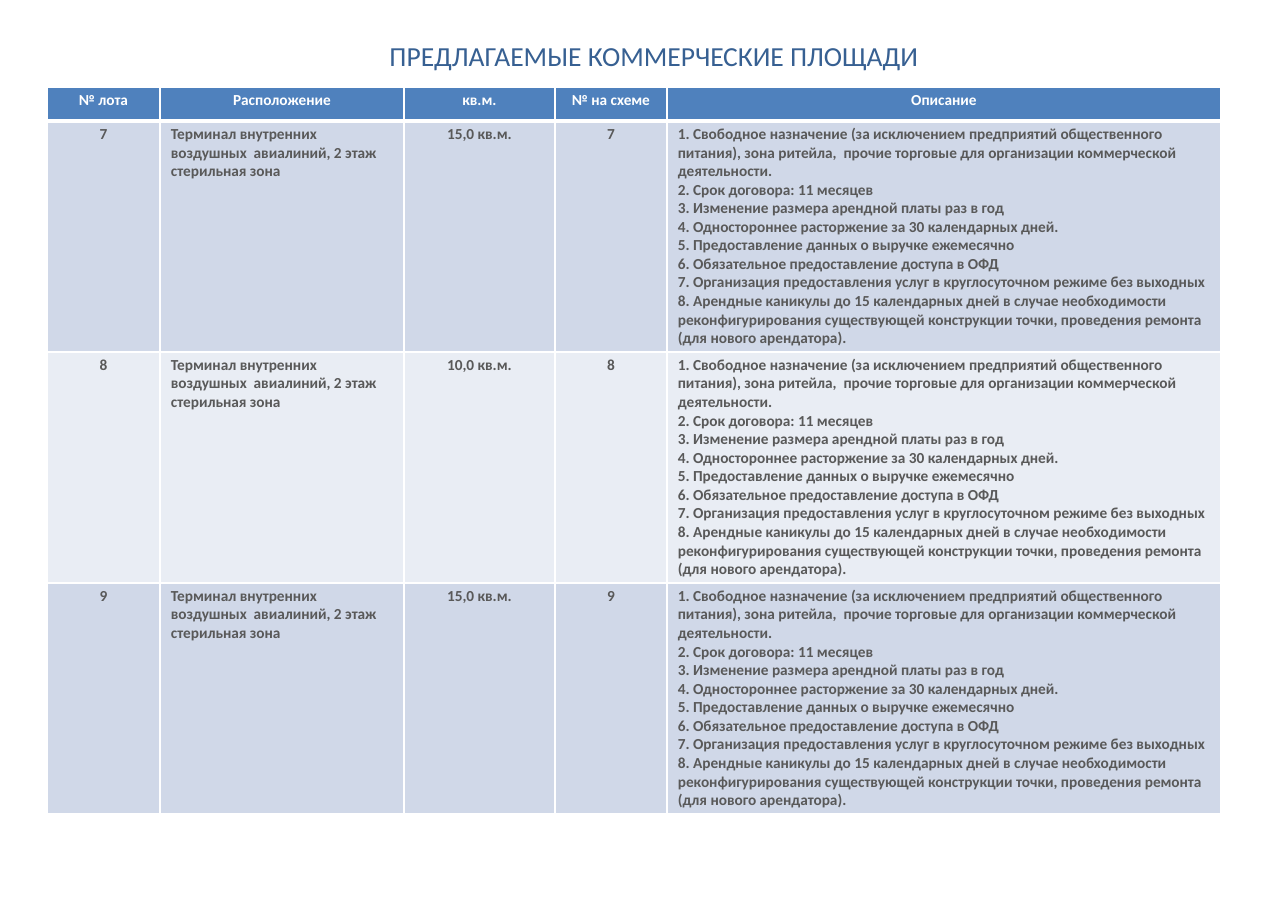
from typing import NamedTuple

from lxml import etree
from pptx import Presentation
from pptx.dml.color import RGBColor
from pptx.enum.text import MSO_ANCHOR, MSO_AUTO_SIZE, PP_ALIGN
from pptx.oxml.ns import qn
from pptx.util import Emu, Pt

PX = 8298  # EMU in one px, at 110.2 px to the inch
LEFT, CENTER = PP_ALIGN.LEFT, PP_ALIGN.CENTER
TOP = MSO_ANCHOR.TOP
NO_AUTOFIT = MSO_AUTO_SIZE.NONE

WHITE = RGBColor(0xFF, 0xFF, 0xFF)
GRAY = RGBColor(0x59, 0x59, 0x59)
TITLE_BLUE = RGBColor(0x37, 0x60, 0x92)
HEADER_BLUE = RGBColor(0x4F, 0x81, 0xBD)
BANDS = (RGBColor(0xD0, 0xD8, 0xE8), RGBColor(0xE9, 0xED, 0xF4))
FONT = "Calibri"


class Column(NamedTuple):
    heading: str
    width: int
    align: PP_ALIGN


class Lot(NamedTuple):
    number: str
    area: str


COLUMNS = (
    Column("№ лота", 113, CENTER),
    Column("Расположение", 244, LEFT),
    Column("кв.м.", 151, CENTER),
    Column("№ на схеме", 112, CENTER),
    Column("Описание", 554, LEFT),
)
LOTS = (Lot("7", "15,0 кв.м."), Lot("8", "10,0 кв.м."), Lot("9", "15,0 кв.м."))
LOCATION = "Терминал внутренних воздушных  авиалиний, 2 этаж\nстерильная зона"
TERMS = "\n".join((
    "1. Свободное назначение (за исключением предприятий общественного питания), "
    "зона ритейла,  прочие торговые для организации коммерческой деятельности.",
    "2. Срок договора: 11 месяцев",
    "3. Изменение размера арендной платы раз в год",
    "4. Одностороннее расторжение за 30 календарных дней.",
    "5. Предоставление данных о выручке ежемесячно",
    "6. Обязательное предоставление доступа в ОФД",
    "7. Организация предоставления услуг в круглосуточном режиме без выходных",
    "8. Арендные каникулы до 15 календарных дней в случае необходимости "
    "реконфигурирования существующей конструкции точки, проведения ремонта "
    "(для нового арендатора).",
))
HEADER_HEIGHT, LOT_HEIGHT = 34, 231


def px(n: int) -> Emu:
    return Emu(n * PX)


def write(tf, text: str, *, size: int, color: RGBColor,
          bold: bool = False, align: PP_ALIGN = LEFT) -> None:
    """Fill a text frame with one paragraph per line of text."""
    tf.word_wrap = True
    tf.text = text
    for p in tf.paragraphs:
        p.alignment = align
        for r in p.runs:
            r.font.name = FONT
            r.font.size = Pt(size)
            r.font.bold = bold
            r.font.color.rgb = color


def add_borders(cell, bottom: int) -> None:
    """Draw white 1 pt borders, with the bottom one in its own width."""
    tc_pr = cell._tc.get_or_add_tcPr()
    for side, width in (("L", 1), ("R", 1), ("T", 1), ("B", bottom)):
        ln = etree.SubElement(tc_pr, qn(f"a:ln{side}"), w=str(Pt(width)))
        fill = etree.SubElement(ln, qn("a:solidFill"))
        etree.SubElement(fill, qn("a:srgbClr"), val=str(WHITE))


def fill_cell(cell, text: str, *, fill: RGBColor, color: RGBColor,
              align: PP_ALIGN, bottom: int = 1) -> None:
    add_borders(cell, bottom)
    cell.fill.solid()
    cell.fill.fore_color.rgb = fill
    cell.vertical_anchor = TOP
    cell.margin_left = cell.margin_right = px(11)
    cell.margin_top, cell.margin_bottom = px(4), px(3)
    write(cell.text_frame, text, size=10, color=color, bold=True, align=align)


def add_title(slide, text: str) -> None:
    sp = slide.shapes.title
    sp.left, sp.top, sp.width, sp.height = px(66), px(33), px(1176), px(45)
    tf = sp.text_frame
    tf.auto_size = NO_AUTOFIT
    tf.vertical_anchor = TOP
    write(tf, text, size=18, color=TITLE_BLUE, align=CENTER)


def add_lot_table(slide) -> None:
    width = sum(column.width for column in COLUMNS)
    height = HEADER_HEIGHT + LOT_HEIGHT * len(LOTS)
    table = slide.shapes.add_table(len(LOTS) + 1, len(COLUMNS), px(47), px(87),
                                   px(width), px(height)).table
    table.rows[0].height = px(HEADER_HEIGHT)
    for c, column in enumerate(COLUMNS):
        table.columns[c].width = px(column.width)
        fill_cell(table.cell(0, c), column.heading, fill=HEADER_BLUE,
                  color=WHITE, align=CENTER, bottom=3)
    for i, lot in enumerate(LOTS):
        table.rows[i + 1].height = px(LOT_HEIGHT)
        texts = (lot.number, LOCATION, lot.area, lot.number, TERMS)
        for c, (column, text) in enumerate(zip(COLUMNS, texts)):
            fill_cell(table.cell(i + 1, c), text, fill=BANDS[i % 2],
                      color=GRAY, align=column.align)


def main() -> None:
    prs = Presentation()
    prs.slide_width, prs.slide_height = px(1288), px(911)
    slide = prs.slides.add_slide(prs.slide_layouts[5])
    add_title(slide, "ПРЕДЛАГАЕМЫЕ КОММЕРЧЕСКИЕ ПЛОЩАДИ")
    add_lot_table(slide)
    prs.save("out.pptx")


if __name__ == "__main__":
    main()
